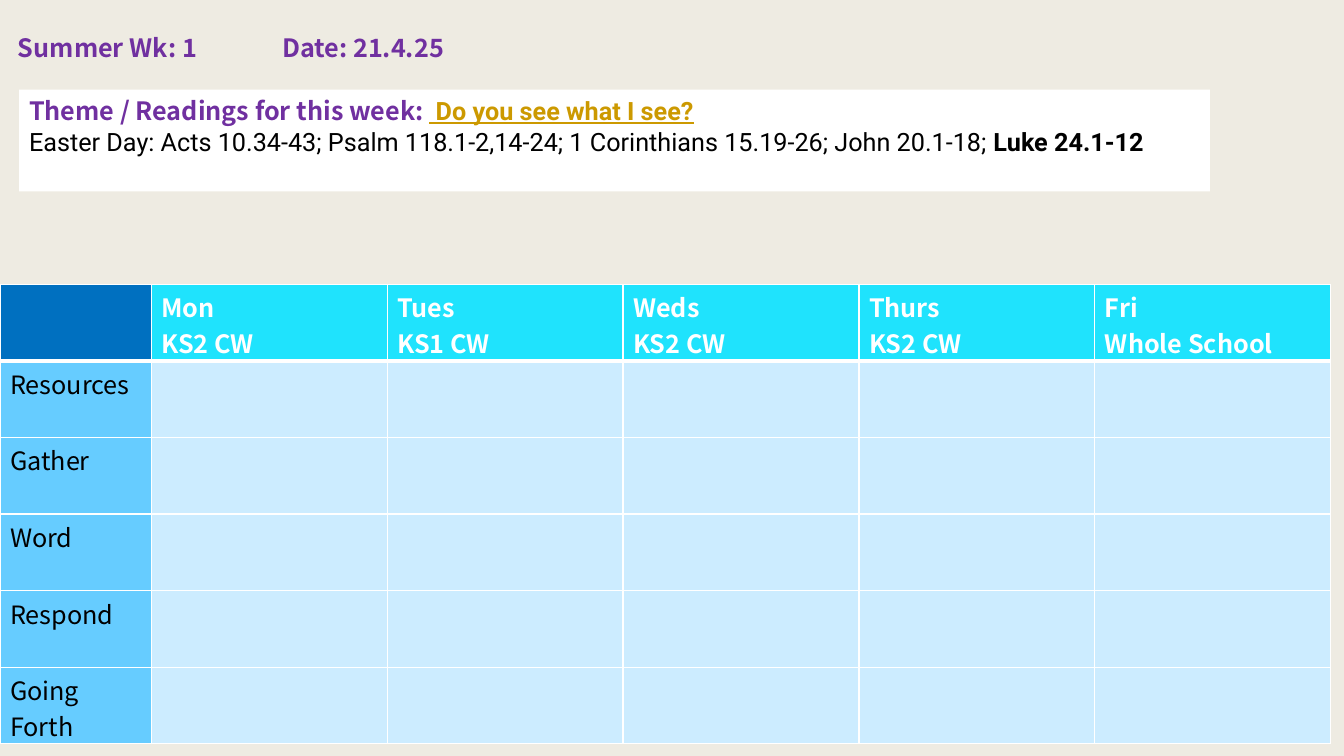
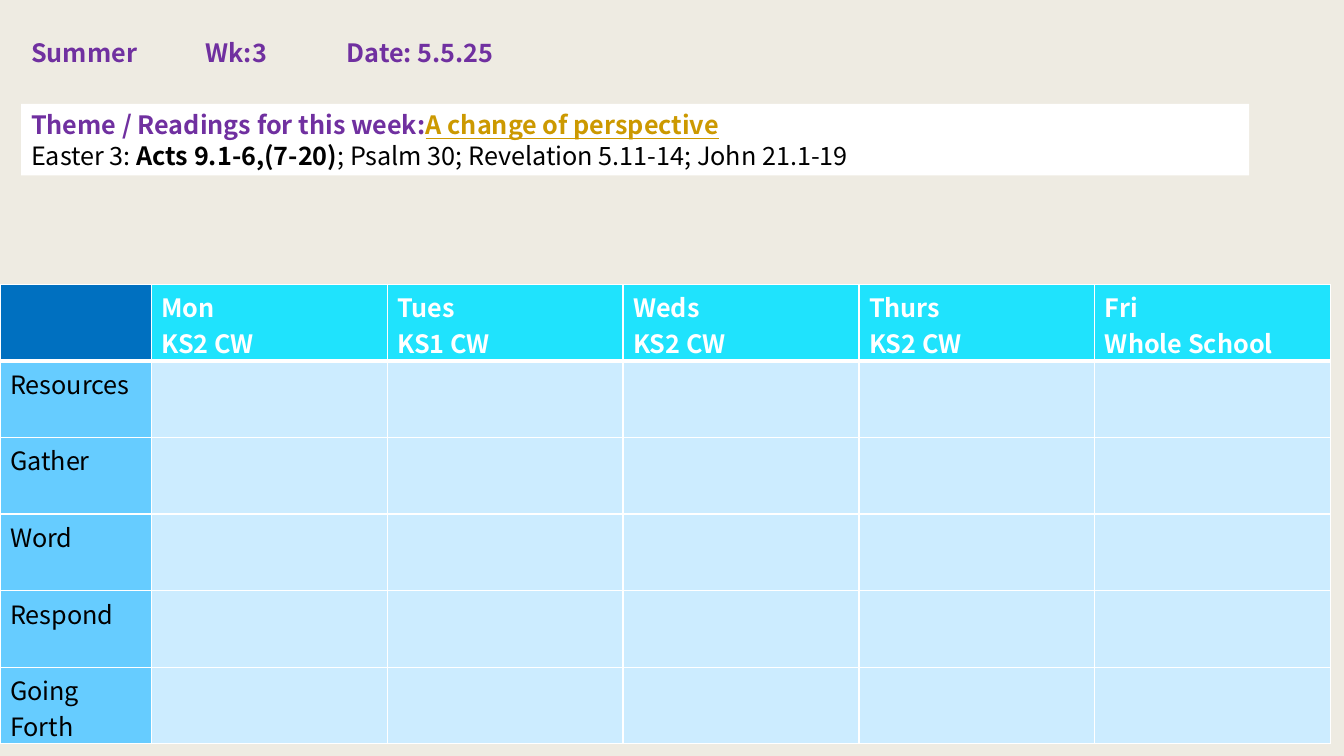
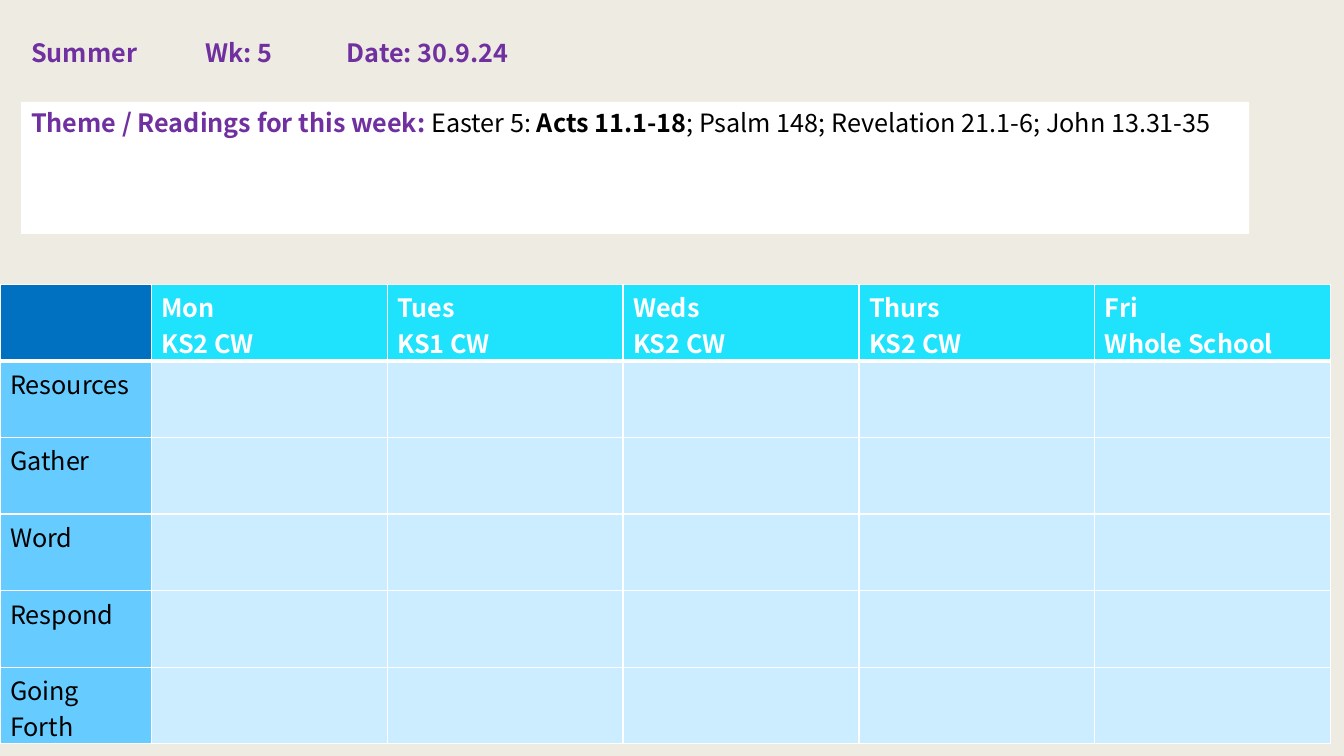
from lxml import etree
from pptx import Presentation
from pptx import util as u
from pptx.dml.color import RGBColor
from pptx.enum import shapes, text
from pptx.oxml.ns import qn

MAIN_FONT = "Noto Sans CJK JP"
BACKGROUND, WHITE, BLACK = "EEEBE2", "FFFFFF", "000000"
PURPLE, GOLD = "7030A0", "CC9900"
CORNER, HEADER, LABEL, BODY = "0070C0", "1FE3FD", "66CCFF", "CCECFF"

TABLE_BOX = (0, 2.82, 13.2, 4.56)
LABEL_WIDTH = 1.5
DAYS = [("Mon", "KS2 CW"), ("Tues", "KS1 CW"), ("Weds", "KS2 CW"),
        ("Thurs", "KS2 CW"), ("Fri", "Whole School")]
STAGES = ["Resources", "Gather", "Word", "Respond", "Going Forth"]

THEME_LABEL = ("Theme / Readings for this week:", {"color": PURPLE, "bold": True})
THEME_TITLE = {"color": GOLD, "bold": True, "underline": True}
ROBOTO = {"font": "Roboto"}
STRONG = {"bold": True}

WEEKS = [
    {
        "heading": "Summer Wk: 1\tDate: 21.4.25",
        "heading_box": (0.08, 0.27, 12.98, 0.4),
        "tabs": [2.62],
        "theme_box": (0.19, 0.89, 11.81, 1.01),
        "theme": [
            [THEME_LABEL, (" ", STRONG),
             (" Do you see what I see?", THEME_TITLE | ROBOTO)],
            [("Easter Day: Acts 10.34-43; Psalm 118.1-2,14-24; "
              "1 Corinthians 15.19-26; John 20.1-18; ", ROBOTO),
             ("Luke 24.1-12", STRONG | ROBOTO)],
        ],
    },
    {
        "heading": "Summer\tWk:3\tDate: 5.5.25",
        "heading_box": (0.21, 0.32, 12.98, 0.4),
        "tabs": [1.73, 3.13],
        "theme_box": (0.21, 1.03, 12.18, 0.71),
        "theme": [
            [THEME_LABEL, ("A change of perspective", THEME_TITLE)],
            [("Easter 3: ", {}), ("Acts 9.1-6,(7-20)", STRONG),
             ("; Psalm 30; Revelation 5.11-14; John 21.1-19", {})],
        ],
    },
    {
        "heading": "Summer\tWk: 5\tDate: 30.9.24",
        "heading_box": (0.21, 0.32, 12.98, 0.4),
        "tabs": [1.73, 3.13],
        "theme_box": (0.21, 1.01, 12.18, 1.31),
        "theme": [
            [THEME_LABEL, (" ", STRONG), ("Easter 5: ", {}), ("Acts 11.1-18", STRONG),
             ("; Psalm 148; Revelation 21.1-6; John 13.31-35", {})],
        ],
    },
]


def rgb(value):
    """Turn a hex string into a colour."""
    return RGBColor.from_string(value)


def inches(box):
    """Turn a box in inches into lengths."""
    return [u.Inches(length) for length in box]


def add_run(paragraph, content, color=BLACK, bold=False, underline=False, font=MAIN_FONT):
    """Add formatted text to a paragraph."""
    run = paragraph.add_run()
    run.text = content
    run.font.name = font
    run.font.size = u.Pt(18)
    run.font.bold = bold
    run.font.underline = underline
    run.font.color.rgb = rgb(color)


def write(frame, paragraphs, leading=22):
    """Fill a text frame with paragraphs, each a list of (text, format) runs."""
    frame.word_wrap = True
    for index, runs in enumerate(paragraphs):
        paragraph = frame.add_paragraph() if index else frame.paragraphs[0]
        paragraph.alignment = text.PP_ALIGN.LEFT
        paragraph.line_spacing = u.Pt(leading)
        for content, style in runs:
            add_run(paragraph, content, **style)


def set_tabs(paragraph, positions):
    """Give a paragraph left tab stops at positions in inches."""
    tabs = etree.SubElement(paragraph._p.get_or_add_pPr(), qn("a:tabLst"))
    for position in positions:
        etree.SubElement(tabs, qn("a:tab"), pos=str(u.Inches(position)), algn="l")


def add_heading(slide, box, content, tabs):
    """Place the line with term, week and date."""
    frame = slide.shapes.add_textbox(*inches(box)).text_frame
    write(frame, [[(content, {"color": PURPLE, "bold": True})]])
    set_tabs(frame.paragraphs[0], tabs)


def add_theme(slide, box, paragraphs):
    """Place the white panel with theme and readings."""
    panel = slide.shapes.add_shape(shapes.MSO_SHAPE.RECTANGLE, *inches(box))
    panel.shadow.inherit = False
    panel.fill.solid()
    panel.fill.fore_color.rgb = rgb(WHITE)
    panel.line.fill.background()
    panel.text_frame.vertical_anchor = text.MSO_ANCHOR.TOP
    write(panel.text_frame, paragraphs)


def set_borders(cell, widths):
    """Draw white cell edges from a mapping of edge letter to points."""
    properties = cell._tc.get_or_add_tcPr()
    for edge, width in widths.items():
        line = etree.SubElement(properties, qn(f"a:ln{edge}"), w=str(u.Pt(width)))
        fill = etree.SubElement(line, qn("a:solidFill"))
        etree.SubElement(fill, qn("a:srgbClr"), val=WHITE)


def format_cell(cell, row, fill, lines=(), **style):
    """Set the edges, fill, margins and text of one cell."""
    widths = {"L": 1, "R": 1, "T": 1, "B": 1 if row else 3}
    if row == 1:
        del widths["T"]
    set_borders(cell, widths)
    cell.fill.solid()
    cell.fill.fore_color.rgb = rgb(fill)
    cell.margin_bottom = 0
    write(cell.text_frame, [[(line, style)] for line in lines], leading=25.5)


def add_planner(slide, box):
    """Place the weekly grid of days and stages."""
    row_count, column_count = len(STAGES) + 1, len(DAYS) + 1
    table = slide.shapes.add_table(row_count, column_count, *inches(box)).table
    table.first_row = table.horz_banding = False
    day_width = (box[2] - LABEL_WIDTH) / len(DAYS)
    for index, column in enumerate(table.columns):
        column.width = u.Inches(day_width if index else LABEL_WIDTH)
    for row in table.rows:
        row.height = u.Inches(box[3] / row_count)
    format_cell(table.cell(0, 0), 0, CORNER)
    for column, day in enumerate(DAYS, 1):
        format_cell(table.cell(0, column), 0, HEADER, day, color=WHITE, bold=True)
    for row, stage in enumerate(STAGES, 1):
        format_cell(table.cell(row, 0), row, LABEL, [stage])
        for column in range(1, column_count):
            format_cell(table.cell(row, column), row, BODY)


def add_week(presentation, week):
    """Add the planning slide of one week."""
    slide = presentation.slides.add_slide(presentation.slide_layouts[6])
    slide.background.fill.solid()
    slide.background.fill.fore_color.rgb = rgb(BACKGROUND)
    add_heading(slide, week["heading_box"], week["heading"], week["tabs"])
    add_theme(slide, week["theme_box"], week["theme"])
    add_planner(slide, TABLE_BOX)


def main():
    """Build and save the presentation."""
    presentation = Presentation()
    presentation.slide_width = u.Inches(13.33)
    presentation.slide_height = u.Inches(7.5)
    for week in WEEKS:
        add_week(presentation, week)
    presentation.save("out.pptx")


if __name__ == "__main__":
    main()
